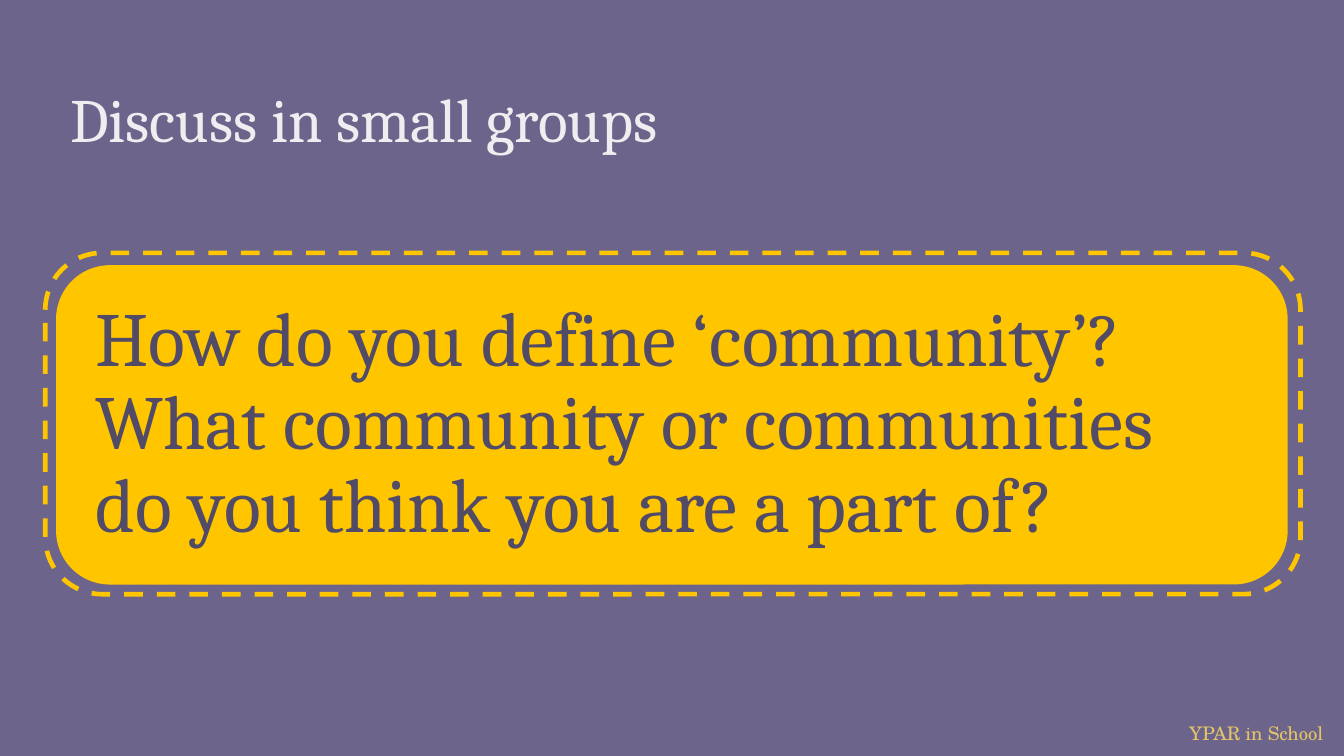
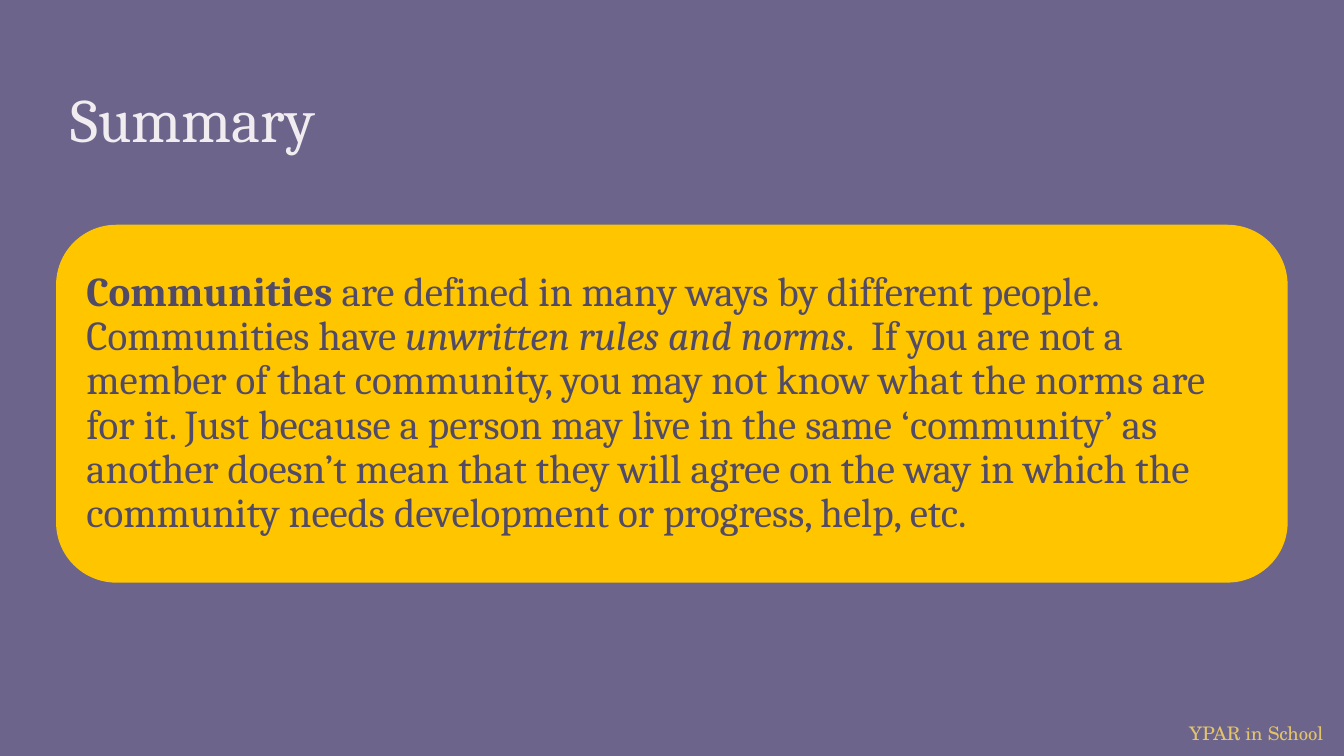
from dataclasses import dataclass
from math import sqrt

from pptx import Presentation
from pptx.dml.color import RGBColor
from pptx.enum.dml import MSO_LINE_DASH_STYLE as Dash
from pptx.enum.shapes import MSO_AUTO_SHAPE_TYPE as ShapeType
from pptx.enum.text import MSO_ANCHOR as Anchor
from pptx.presentation import Presentation as Deck
from pptx.shapes.autoshape import Shape
from pptx.slide import Slide
from pptx.text.text import Font
from pptx.util import Inches, Pt

WIDTH = Inches(10)
HEIGHT = WIDTH * 9 // 16
COLUMN, ROW = WIDTH / 100, HEIGHT / 100
CORNER = 1 / 6

PURPLE = "6C648B"
INK = "514B68"
YELLOW = "FFC600"
PALE = "F0ECF0"
SAND = "E4C469"
SERIF = "Cambria"
FOOTER_SERIF = "TeX Gyre Schola"


@dataclass(frozen=True)
class Area:
    column: float
    row: float
    columns: float
    rows: float

    def within_corners(self) -> "Area":
        inset = self.rows * ROW * CORNER * (1 - 1 / sqrt(2))
        across, down = inset / COLUMN, inset / ROW
        return Area(self.column + across, self.row + down,
                    self.columns - 2 * across, self.rows - 2 * down)

    def lengths(self) -> tuple[int, int, int, int]:
        return (round(self.column * COLUMN), round(self.row * ROW),
                round(self.columns * COLUMN), round(self.rows * ROW))


@dataclass(frozen=True)
class Span:
    text: str
    bold: bool = False
    italic: bool = False


@dataclass(frozen=True)
class TextStyle:
    size: float
    color: str
    face: str = SERIF
    anchor: Anchor = Anchor.TOP
    margin: float = 0.1
    spacing: float = 1.0
    wrap: bool = True


@dataclass(frozen=True)
class Panel:
    area: Area
    style: TextStyle
    spans: tuple[Span, ...]


@dataclass(frozen=True)
class Page:
    title: str
    panel: Panel
    frame: Area | None = None


LEFT, BODY_WIDTH = 4.24, 91.5
TITLE_AREA = Area(LEFT, 8.9, BODY_WIDTH, 13.3)
FOOTER_AREA = Area(87.5, 94.6, 12.5, 4.8)
TITLE_STYLE = TextStyle(33, PALE, anchor=Anchor.BOTTOM)
FOOTER_STYLE = TextStyle(10, SAND, FOOTER_SERIF, margin=0.05, wrap=False)
FOOTER_INDENT = 0.1

PAGES = (
    Page(
        "Discuss in small groups",
        Panel(
            Area(LEFT, 35.2, BODY_WIDTH, 42),
            TextStyle(41, INK, anchor=Anchor.MIDDLE, margin=0.17, spacing=0.9),
            (Span("How do you define ‘community’? What community or "
                  "communities do you think you are a part of?"),),
        ),
        frame=Area(3.37, 33.45, 93.4, 45.15),
    ),
    Page(
        "Summary",
        Panel(
            Area(LEFT, 29.85, BODY_WIDTH, 47.1),
            TextStyle(22, INK, anchor=Anchor.MIDDLE, margin=0.09, spacing=0.9),
            (
                Span("Communities", bold=True),
                Span(" are defined in many ways by different people. "
                     "Communities have "),
                Span("unwritten rules and norms", italic=True),
                Span(".  If you are not a member of that community, you may "
                     "not know what the norms are for it. Just because a "
                     "person may live in the same ‘community’ as another "
                     "doesn’t mean that they will agree on the way in which "
                     "the community needs development or progress, help, etc."),
            ),
        ),
    ),
)


def rgb(color: str) -> RGBColor:
    return RGBColor.from_string(color)


def set_font(font: Font, style: TextStyle) -> None:
    font.name = style.face
    font.size = Pt(style.size)
    font.color.rgb = rgb(style.color)


def add_text(slide: Slide, area: Area, style: TextStyle, *spans: Span) -> Shape:
    box = slide.shapes.add_textbox(*area.lengths())
    frame = box.text_frame
    frame.word_wrap = style.wrap
    frame.vertical_anchor = style.anchor
    frame.margin_left = frame.margin_right = Inches(style.margin)
    frame.margin_top = frame.margin_bottom = Inches(style.margin)
    paragraph = frame.paragraphs[0]
    paragraph.line_spacing = style.spacing
    set_font(paragraph.font, style)
    for span in spans:
        run = paragraph.add_run()
        run.text = span.text
        if span.bold:
            run.font.bold = True
        if span.italic:
            run.font.italic = True
    return box


def add_rounded(slide: Slide, area: Area, line_width: float) -> Shape:
    shape = slide.shapes.add_shape(ShapeType.ROUNDED_RECTANGLE, *area.lengths())
    shape.adjustments[0] = CORNER
    shape.shadow.inherit = False
    shape.line.color.rgb = rgb(YELLOW)
    shape.line.width = Pt(line_width)
    return shape


def add_panel(slide: Slide, panel: Panel) -> None:
    shape = add_rounded(slide, panel.area, 1)
    shape.fill.solid()
    shape.fill.fore_color.rgb = rgb(YELLOW)
    add_text(slide, panel.area.within_corners(), panel.style, *panel.spans)


def add_dashed_frame(slide: Slide, area: Area) -> None:
    shape = add_rounded(slide, area, 2.5)
    shape.fill.background()
    shape.line.dash_style = Dash.DASH


def add_page(deck: Deck, page: Page) -> None:
    slide = deck.slides.add_slide(deck.slide_layouts[6])
    slide.background.fill.solid()
    slide.background.fill.fore_color.rgb = rgb(PURPLE)
    footer = add_text(slide, FOOTER_AREA, FOOTER_STYLE, Span("YPAR in School"))
    footer.text_frame.margin_left = Inches(FOOTER_INDENT)
    add_text(slide, TITLE_AREA, TITLE_STYLE, Span(page.title))
    add_panel(slide, page.panel)
    if page.frame:
        add_dashed_frame(slide, page.frame)


def main() -> None:
    deck = Presentation()
    deck.slide_width, deck.slide_height = WIDTH, HEIGHT
    for page in PAGES:
        add_page(deck, page)
    deck.save("out.pptx")


if __name__ == "__main__":
    main()
